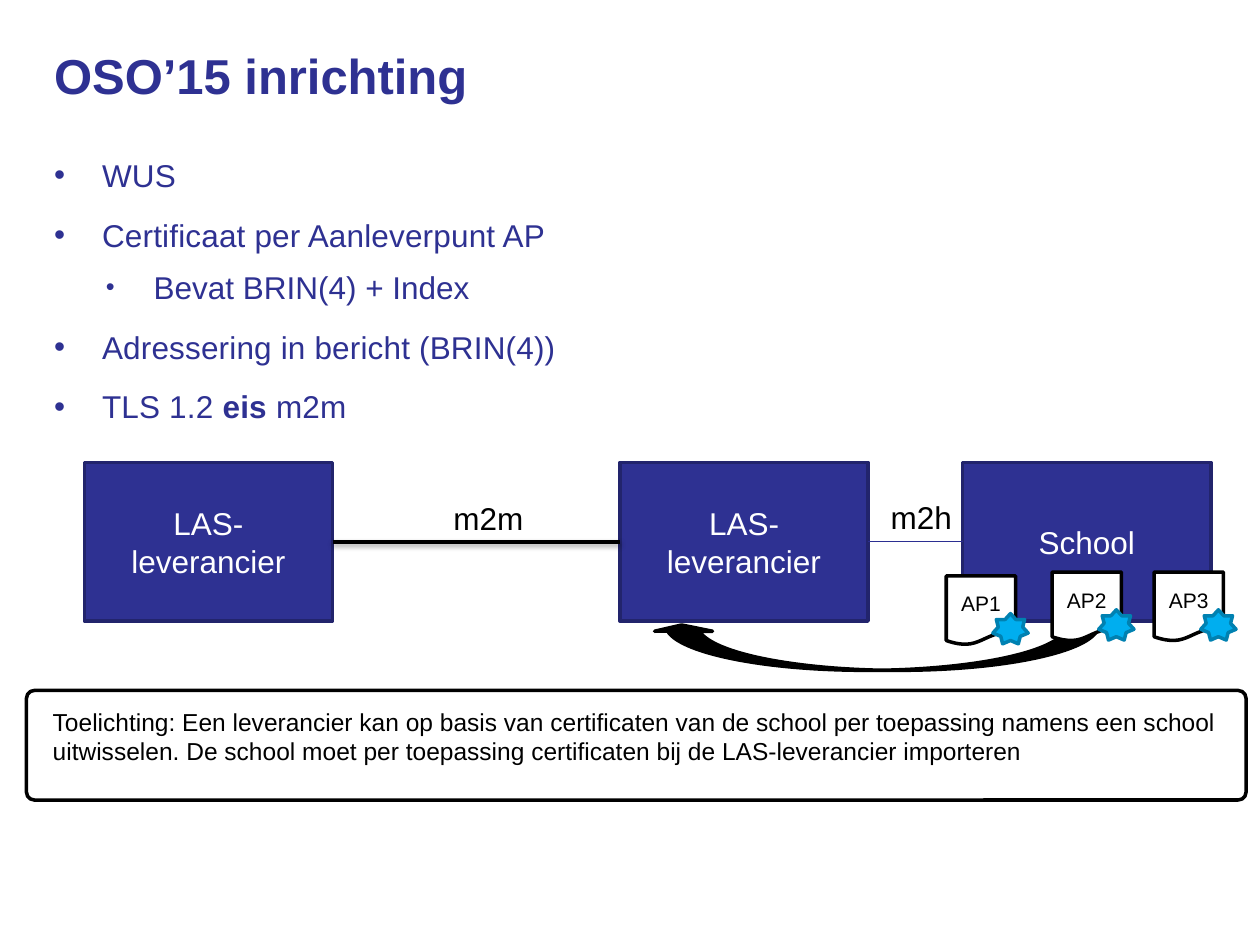
from lxml.etree import SubElement
from pptx import Presentation
from pptx.dml.color import RGBColor
from pptx.enum.shapes import MSO_CONNECTOR, MSO_SHAPE
from pptx.enum.text import MSO_ANCHOR, MSO_AUTO_SIZE, PP_ALIGN
from pptx.oxml.ns import qn
from pptx.util import Inches, Pt

COLORS = {
    "blue": "2E3192", "blue_edge": "22246C", "link": "2B2E91", "star": "00AEEF",
    "star_edge": "0081B1", "black": "000000", "white": "FFFFFF",
}
TITLE = "OSO’15 inrichting"
BULLETS = [
    (0, ["WUS"]),
    (0, ["Certificaat per Aanleverpunt AP"]),
    (1, ["Bevat BRIN(4) + Index"]),
    (0, ["Adressering in bericht (BRIN(4))"]),
    (0, ["TLS 1.2 ", "eis ", "m2m"]),
]
BOLD_RUNS = {"eis "}
LEVELS = [
    {"indent": 0.38, "spacing": 28, "bullet_size": 100, "tracking": 10},
    {"indent": 0.79, "spacing": 24, "bullet_size": 80, "tracking": 0},
]
HANGING = 0.38
PARTIES = [(0.67, ["LAS-", "leverancier"]), (4.92, ["LAS-leverancier"]), (7.64, ["School"])]
PARTY_TOP, PARTY_WIDTH, PARTY_HEIGHT = 3.67, 1.97, 1.26
LINKS = [("black", 2), ("link", 0.75)]
LINK_LABELS = [("m2m", 3.5, 3.91), ("m2h", 6.97, 3.9)]
ACCESS_POINTS = [("AP1", 7.51, 4.57), ("AP2", 8.35, 4.54), ("AP3", 9.16, 4.54)]
NOTE = (
    "Toelichting: Een leverancier kan op basis van certificaten van de school per "
    "toepassing namens een school uitwisselen. De school moet per toepassing "
    "certificaten bij de LAS-leverancier importeren"
)


def color(name):
    return RGBColor.from_string(COLORS[name])


def write_text(frame, text, *, size=18, ink="black", bold=False, align=PP_ALIGN.LEFT,
               anchor=MSO_ANCHOR.TOP, spacing=None):
    frame.word_wrap = True
    frame.vertical_anchor = anchor
    for index, (level, runs) in enumerate(text):
        paragraph = frame.paragraphs[0] if index == 0 else frame.add_paragraph()
        paragraph.level = level
        paragraph.alignment = align
        if spacing:
            paragraph.line_spacing = Pt(spacing)
        for words in runs:
            run = paragraph.add_run()
            run.text = words
            run.font.name = "Arial"
            run.font.size = Pt(size)
            run.font.bold = bold or words in BOLD_RUNS
            run.font.color.rgb = color(ink)


def place(shape, left, top, width, height):
    shape.left, shape.top = Inches(left), Inches(top)
    shape.width, shape.height = Inches(width), Inches(height)


def clear_margins(frame):
    frame.auto_size = MSO_AUTO_SIZE.NONE
    frame.margin_left = frame.margin_right = frame.margin_top = frame.margin_bottom = 0


def add_box(slide, preset, bounds, fill, edge, adjustments=()):
    shape = slide.shapes.add_shape(preset, *map(Inches, bounds))
    shape.shadow.inherit = False
    shape.fill.solid()
    shape.fill.fore_color.rgb = color(fill)
    shape.line.color.rgb = color(edge)
    shape.line.width = Pt(2)
    for index, value in enumerate(adjustments):
        shape.adjustments[index] = value
    return shape


def add_label(slide, words, bounds, size=18):
    label = slide.shapes.add_textbox(*map(Inches, bounds))
    write_text(label.text_frame, [(0, [words])], size=size)


def add_link(slide, start, end, y, ink, width, shadow):
    link = slide.shapes.add_connector(
        MSO_CONNECTOR.STRAIGHT, Inches(start), Inches(y), Inches(end), Inches(y))
    link.line.color.rgb = color(ink)
    link.line.width = Pt(width)
    effects = SubElement(link._element.spPr, qn("a:effectLst"))
    if shadow:
        outer = SubElement(effects, qn("a:outerShdw"), blurRad=str(Pt(3.1)),
                           dist=str(Pt(1.6)), dir="5400000", rotWithShape="0")
        ink_element = SubElement(outer, qn("a:srgbClr"), val=COLORS["black"])
        SubElement(ink_element, qn("a:alpha"), val="38000")


def format_bullet(paragraph, first):
    level = LEVELS[paragraph.level]
    paragraph.line_spacing = Pt(level["spacing"])
    paragraph.space_before = Pt(0 if first else 6)
    properties = paragraph._p.get_or_add_pPr()
    properties.set("marL", str(Inches(level["indent"])))
    properties.set("indent", str(-Inches(HANGING)))
    bullet_color = SubElement(properties, qn("a:buClr"))
    SubElement(bullet_color, qn("a:srgbClr"), val=COLORS["blue"])
    SubElement(properties, qn("a:buSzPct"), val=str(level["bullet_size"] * 1000))
    SubElement(properties, qn("a:buFont"), typeface="Arial")
    SubElement(properties, qn("a:buChar"), char="•")
    for run in paragraph.runs:
        run.font._element.set("spc", str(level["tracking"]))


def add_headings(slide):
    title, body = slide.placeholders
    place(title, 0.43, 0.33, 9.06, 0.64)
    place(body, 0.43, 1.15, 9.06, 5.51)
    clear_margins(title.text_frame)
    clear_margins(body.text_frame)
    write_text(title.text_frame, [(0, [TITLE])], size=28, ink="blue", bold=True, spacing=36)
    write_text(body.text_frame, BULLETS, ink="blue")
    for index, paragraph in enumerate(body.text_frame.paragraphs):
        format_bullet(paragraph, index == 0)


def add_diagram(slide):
    for left, lines in PARTIES:
        party = add_box(slide, MSO_SHAPE.RECTANGLE,
                        (left, PARTY_TOP, PARTY_WIDTH, PARTY_HEIGHT), "blue", "blue_edge")
        write_text(party.text_frame, [(0, [line]) for line in lines], ink="white",
                   align=PP_ALIGN.CENTER, anchor=MSO_ANCHOR.MIDDLE)

    middle = PARTY_TOP + PARTY_HEIGHT / 2
    for (left, _), (following, _), (ink, width) in zip(PARTIES, PARTIES[1:], LINKS):
        add_link(slide, left + PARTY_WIDTH, following, middle, ink, width, ink == "black")

    arrow = add_box(slide, MSO_SHAPE.CURVED_DOWN_ARROW, (5.18, 4.96, 3.54, 0.36),
                    "black", "black", (0.699, 1.278, 0.137))
    arrow.rotation = 180

    for name, left, top in ACCESS_POINTS:
        document = add_box(slide, MSO_SHAPE.FLOWCHART_DOCUMENT,
                           (left, top, 0.55, 0.55), "white", "black")
        write_text(document.text_frame, [(0, [name])], size=12,
                   align=PP_ALIGN.CENTER, anchor=MSO_ANCHOR.MIDDLE)
        add_box(slide, MSO_SHAPE.STAR_7_POINT, (left + 0.37, top + 0.3, 0.28, 0.24),
                "star", "star_edge")

    add_box(slide, MSO_SHAPE.ROUNDED_RECTANGLE, (0.21, 5.48, 9.68, 0.87),
            "white", "black", (0.073,))
    add_label(slide, NOTE, (0.32, 5.56, 9.49, 0.57), size=14)
    for words, left, top in LINK_LABELS:
        add_label(slide, words, (left, top, 0.87, 0.4))


def main():
    presentation = Presentation()
    presentation.slide_width, presentation.slide_height = Inches(10), Inches(7.5)
    slide = presentation.slides.add_slide(presentation.slide_layouts[1])
    add_headings(slide)
    add_diagram(slide)
    presentation.save("out.pptx")


if __name__ == "__main__":
    main()
